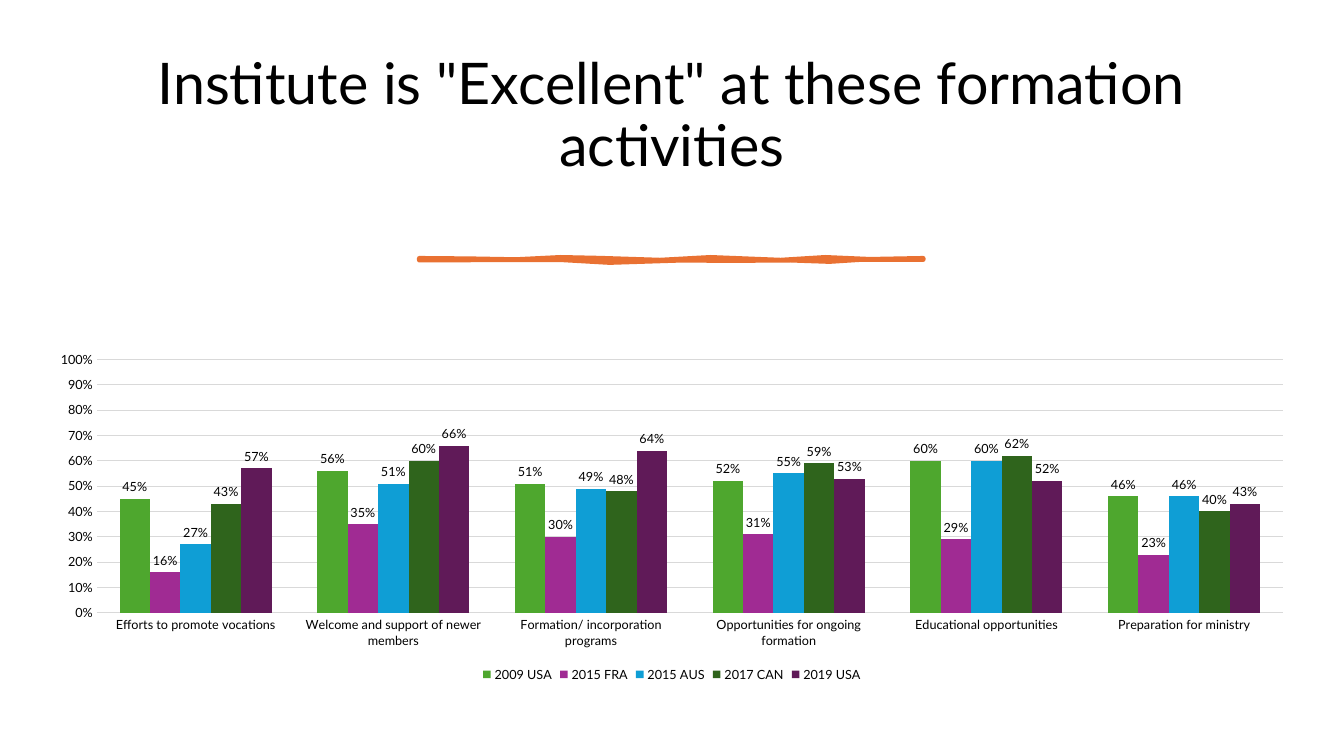
from pptx import Presentation
from pptx.chart.data import CategoryChartData as ChartData
from pptx.dml.color import RGBColor as RGB
from pptx.enum.chart import XL_CHART_TYPE as Kind
from pptx.enum.chart import XL_LABEL_POSITION as Spot
from pptx.enum.chart import XL_LEGEND_POSITION as Side
from pptx.enum.chart import XL_TICK_MARK as Tick
from pptx.enum.text import MSO_ANCHOR as Anchor
from pptx.enum.text import PP_ALIGN as Align
from pptx.util import Pt

CATS = [
    "Efforts to promote vocations",
    "Welcome and support of newer members",
    "Formation/ incorporation programs",
    "Opportunities for ongoing formation",
    "Educational opportunities",
    "Preparation for ministry",
]
SERIES = [
    ("2009 USA", "4EA72E", (0.45, 0.56, 0.51, 0.52, 0.60, 0.46)),
    ("2015 FRA", "A02B93", (0.16, 0.35, 0.30, 0.31, 0.29, 0.23)),
    ("2015 AUS", "0F9ED5", (0.27, 0.51, 0.49, 0.55, 0.60, 0.46)),
    ("2017 CAN", "2F641C", (0.43, 0.60, 0.48, 0.59, 0.62, 0.40)),
    ("2019 USA", "601A58", (0.57, 0.66, 0.64, 0.53, 0.52, 0.43)),
]

# Outline of the brush stroke, in points from its top left corner:
# along the upper edge, then back along the lower one.
BRUSH = [
    (0, 0.7), (36, 1), (69, 1.6), (101, 0), (129, 0.6), (172, 2),
    (208, 0), (258, 2), (290, 0), (322, 1.4), (360, 0.7),
    (360, 1.7), (315, 1.7), (293, 3.1), (265, 2.1), (226, 2.4),
    (186, 2.2), (136, 3.8), (101, 1.8), (65, 1.8), (0, 2.1),
]


def color(code):
    return RGB.from_string(code)


def apply(item, **values):
    for name, value in values.items():
        setattr(item, name, value)


class Deck:
    face, ink, rule, accent = "Lato", "000000", "D9D9D9", "E97132"

    def __init__(self, width, height):
        self.show = Presentation()
        apply(self.show, slide_width=Pt(width), slide_height=Pt(height))
        self.slide = self.show.slides.add_slide(self.show.slide_layouts[6])

    def style(self, font, size):
        apply(font, name=self.face, size=Pt(size), bold=False)
        font.color.rgb = color(self.ink)

    def line(self, line, code, width):
        line.color.rgb = color(code)
        line.width = Pt(width)

    def title(self, text, box, size, base):
        """Add a centred title whose text ends base points above the box bottom."""
        frame = self.slide.shapes.add_textbox(*map(Pt, box)).text_frame
        apply(frame, word_wrap=True, vertical_anchor=Anchor.BOTTOM,
              margin_bottom=Pt(base))
        para = frame.paragraphs[0]
        apply(para, text=text, alignment=Align.CENTER, line_spacing=0.9)
        self.style(para.runs[0].font, size)

    def brush(self, left, top, points, width):
        first, *rest = [(Pt(left + x), Pt(top + y)) for x, y in points]
        pen = self.slide.shapes.build_freeform(*first)
        pen.add_line_segments(rest, close=True)
        shape = pen.convert_to_shape()
        shape.shadow.inherit = False
        shape.fill.solid()
        shape.fill.fore_color.rgb = color(self.accent)
        self.line(shape.line, self.accent, width)

    def chart(self, cats, series, box, size):
        data = ChartData(number_format="0%")
        data.categories = cats
        for name, _, values in series:
            data.add_series(name, values)
        chart = self.slide.shapes.add_chart(
            Kind.COLUMN_CLUSTERED, *map(Pt, box), data).chart
        apply(chart, has_title=False, has_legend=True)
        self.style(chart.font, size)
        apply(chart.legend, position=Side.BOTTOM, include_in_layout=False)
        self.style(chart.legend.font, size)

        for axis in (chart.category_axis, chart.value_axis):
            apply(axis, major_tick_mark=Tick.NONE, minor_tick_mark=Tick.NONE)
            self.style(axis.tick_labels.font, size)
        self.line(chart.category_axis.format.line, self.rule, 0.75)
        axis = chart.value_axis
        apply(axis, minimum_scale=0, maximum_scale=1, major_unit=0.1,
              has_major_gridlines=True)
        axis.format.line.fill.background()
        self.line(axis.major_gridlines.format.line, self.rule, 0.75)
        apply(axis.tick_labels, number_format="0%", number_format_is_linked=False)

        plot = chart.plots[0]
        apply(plot, gap_width=150, overlap=0, vary_by_categories=False)
        for bars, (_, code, _) in zip(plot.series, series):
            bars.format.fill.solid()
            bars.format.fill.fore_color.rgb = color(code)
            labels = bars.data_labels
            apply(labels, show_value=True, position=Spot.OUTSIDE_END,
                  number_format="0%", number_format_is_linked=False)
            self.style(labels.font, size)

    def save(self):
        self.show.save("out.pptx")


def main():
    deck = Deck(960, 540)
    deck.title('Institute is "Excellent" at these formation activities',
               (50.4, 36, 859, 144), size=41, base=52)
    deck.brush(299.5, 183.8, BRUSH, width=3.25)
    deck.chart(CATS, SERIES, (25.2, 246.2, 909.4, 244.1), size=9)
    deck.save()


if __name__ == "__main__":
    main()
